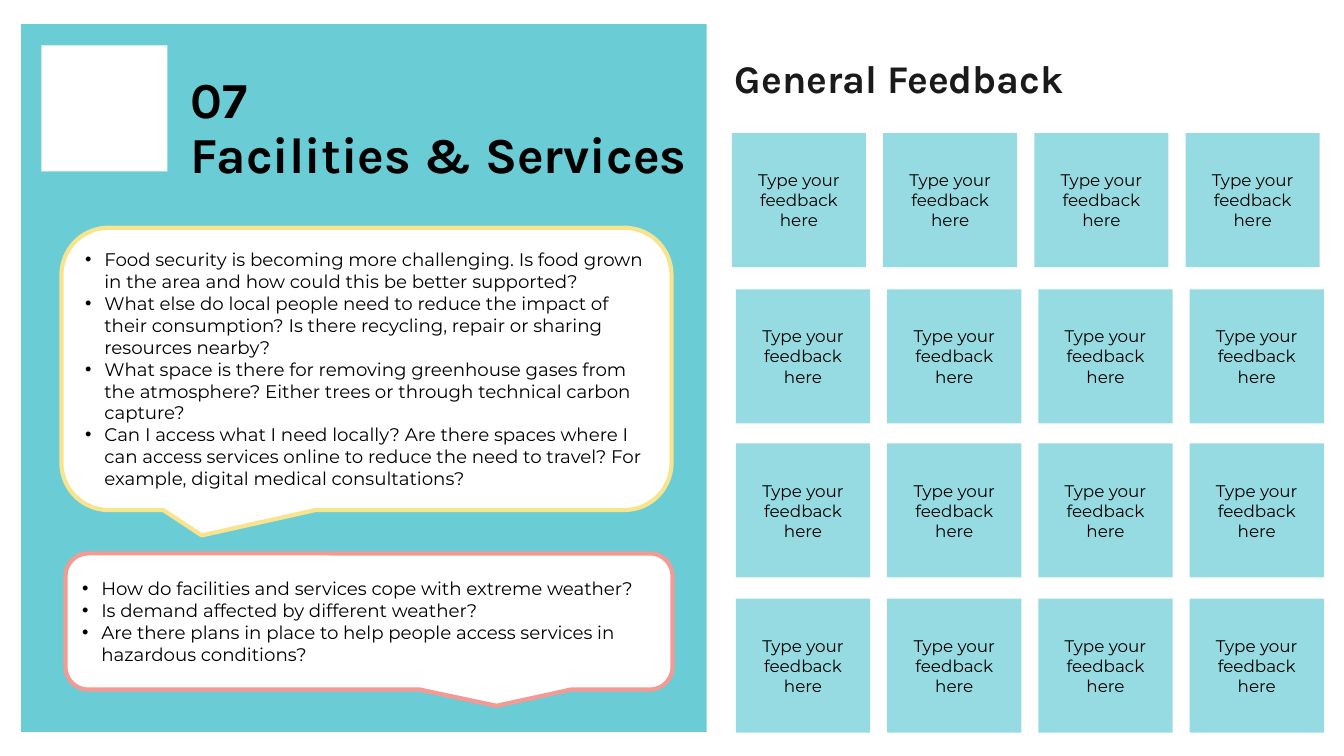
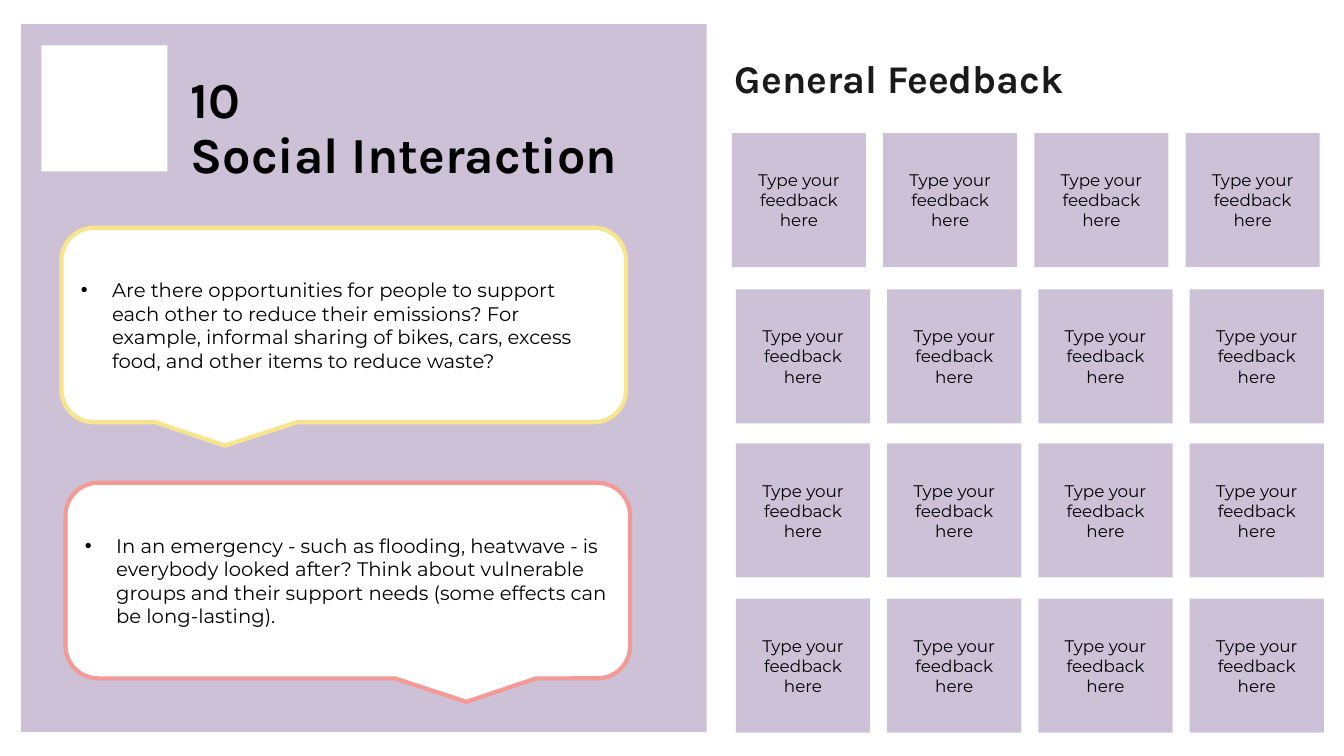
import pptx
import pptx.util
import pptx.dml.color
import pptx.enum.shapes
import pptx.enum.text
import pptx.oxml.ns
from lxml import etree

Inches = pptx.util.Inches
Pt = pptx.util.Pt
SHAPES = pptx.enum.shapes.MSO_SHAPE
ALIGN = pptx.enum.text.PP_ALIGN

# Shared look
WHITE, BLACK, CHARCOAL = "FFFFFF", "000000", "1A1A1A"
YELLOW, CORAL = "F9E48E", "F39A95"
HEADING_FONT, BODY_FONT = "Karla", "Montserrat"

# Shared layout: left, top, width, height in inches
PANEL = (0.21, 0.24, 6.8, 7.02)
ICON_SPACE = (0.41, 0.45, 1.25, 1.25)
TOPIC_TITLE = (1.79, 0.56, 11.5, 1.45)
FEEDBACK_TITLE = (7.19, 0.08, 5.9, 1.45)
NOTE_SIZE, NOTE_STEP, NOTE_COLUMNS = 1.33, 1.5, 4
NOTE_ROWS = [(7.26, 1.32), (7.3, 2.87), (7.3, 4.4), (7.3, 5.94)]

# Content; tail is the callout tip as shares of its width and height from the centre
TOPICS = [
    {
        "title": ["07", "Facilities & Services"],
        "color": "6ACCD5", "panel_alpha": 100, "note_alpha": 70,
        "size": 13, "indent": 0.19,
        "callouts": [
            {"box": (0.61, 2.26, 6.05, 2.8), "border": YELLOW, "tail": (-0.27, 0.59),
             "questions": [
                 "Food security is becoming more challenging. Is food grown in the area "
                 "and how could this be better supported?",
                 "What else do local people need to reduce the impact of their consumption? "
                 "Is there recycling, repair or sharing resources nearby?",
                 "What space is there for removing greenhouse gases from the atmosphere? "
                 "Either trees or through technical carbon capture?",
                 "Can I access what I need locally? Are there spaces where I can access "
                 "services online to reduce the need to travel? For example, digital "
                 "medical consultations?"]},
            {"box": (0.65, 5.49, 6.02, 1.35), "border": CORAL, "tail": (0.21, 0.62),
             "questions": [
                 "How do facilities and services cope with extreme weather?",
                 "Is demand affected by different weather?",
                 "Are there plans in place to help people access services in "
                 "hazardous conditions?"]},
        ],
    },
    {
        "title": ["10", "Social Interaction"],
        "color": "5B327F", "panel_alpha": 30, "note_alpha": 30,
        "size": 14, "indent": 0.31,
        "callouts": [
            {"box": (0.61, 2.26, 5.6, 1.93), "border": YELLOW, "tail": (-0.21, 0.62),
             "questions": [
                 "Are there opportunities for people to support each other to reduce their "
                 "emissions? For example, informal sharing of bikes, cars, excess food, "
                 "and other items to reduce waste?"]},
            {"box": (0.65, 4.79, 5.6, 1.94), "border": CORAL, "tail": (0.21, 0.62),
             "questions": [
                 "In an emergency - such as flooding, heatwave - is everybody looked after? "
                 "Think about vulnerable groups and their support needs (some effects can "
                 "be long-lasting)."]},
        ],
    },
]


def rgb(code):
    return pptx.dml.color.RGBColor.from_string(code)


def add_panel(slide, box, color, alpha=100, kind=SHAPES.RECTANGLE, border=None):
    panel = slide.shapes.add_shape(kind, *map(Inches, box))
    panel.shadow.inherit = False
    panel.fill.solid()
    panel.fill.fore_color.rgb = rgb(color)
    if alpha < 100:
        tint = panel.fill._xPr.find(".//" + pptx.oxml.ns.qn("a:srgbClr"))
        etree.SubElement(tint, pptx.oxml.ns.qn("a:alpha"), val=str(alpha * 1000))
    if border:
        panel.line.color.rgb = rgb(border)
        panel.line.width = Pt(3)
    else:
        panel.line.fill.background()
    return panel


def write(shape, lines, size, font=BODY_FONT, color=BLACK, bold=False,
          align=ALIGN.LEFT, spacing=None, indent=None):
    frame = shape.text_frame
    frame.word_wrap = True
    frame.vertical_anchor = pptx.enum.text.MSO_ANCHOR.MIDDLE
    for number, line in enumerate(lines):
        paragraph = frame.add_paragraph() if number else frame.paragraphs[0]
        paragraph.alignment = align
        if spacing:
            paragraph.line_spacing = spacing
        if indent:
            props = paragraph._p.get_or_add_pPr()
            props.set("marL", str(Inches(indent)))
            props.set("indent", str(-Inches(indent)))
            etree.SubElement(props, pptx.oxml.ns.qn("a:buFont"), typeface="Arial")
            etree.SubElement(props, pptx.oxml.ns.qn("a:buChar"), char="•")
        run = paragraph.add_run()
        run.text = line
        run.font.size = Pt(size)
        run.font.name = font
        run.font.bold = bold
        run.font.color.rgb = rgb(color)


def add_heading(slide, box, lines, size, color=BLACK):
    heading = slide.shapes.add_textbox(*map(Inches, box))
    write(heading, lines, size, font=HEADING_FONT, color=color, bold=True, spacing=0.9)


def add_callout(slide, callout, size, indent):
    bubble = add_panel(slide, callout["box"], WHITE, border=callout["border"],
                       kind=SHAPES.ROUNDED_RECTANGULAR_CALLOUT)
    bubble.adjustments[0], bubble.adjustments[1] = callout["tail"]
    write(bubble, callout["questions"], size, indent=indent)


def add_topic(deck, topic):
    slide = deck.slides.add_slide(deck.slide_layouts[6])

    # Topic panel with its title
    add_panel(slide, PANEL, topic["color"], topic["panel_alpha"])
    add_panel(slide, ICON_SPACE, WHITE)
    add_heading(slide, TOPIC_TITLE, topic["title"], 36)

    # Feedback notes
    for left, top in NOTE_ROWS:
        for column in range(NOTE_COLUMNS):
            box = (left + column * NOTE_STEP, top, NOTE_SIZE, NOTE_SIZE)
            note = add_panel(slide, box, topic["color"], topic["note_alpha"])
            write(note, ["Type your feedback here"], 12, align=ALIGN.CENTER)

    # Questions and the feedback heading
    for callout in topic["callouts"]:
        add_callout(slide, callout, topic["size"], topic["indent"])
    add_heading(slide, FEEDBACK_TITLE, ["General Feedback"], 28, CHARCOAL)


def main():
    deck = pptx.Presentation()
    deck.slide_width, deck.slide_height = Inches(13.33), Inches(7.5)
    for topic in TOPICS:
        add_topic(deck, topic)
    deck.save("out.pptx")


if __name__ == "__main__":
    main()
